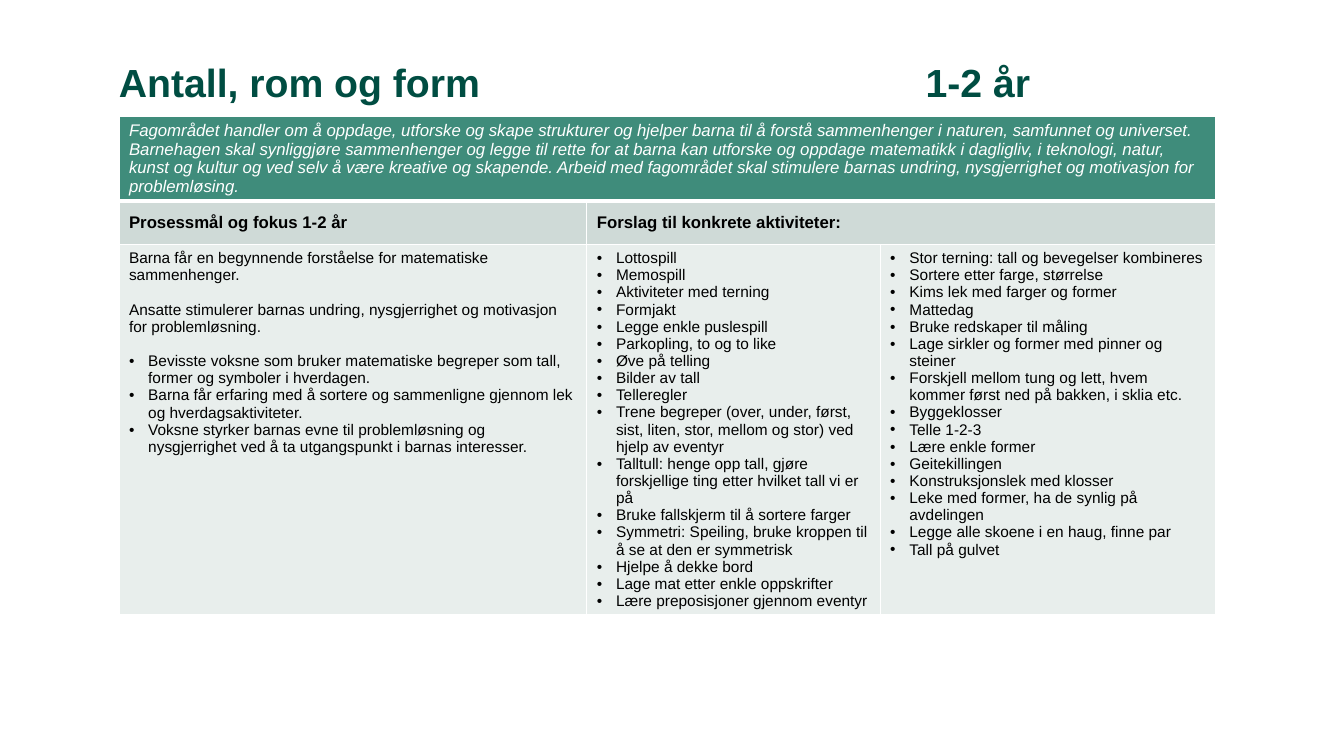
from lxml.etree import SubElement
from pptx import Presentation
from pptx.dml.color import RGBColor
from pptx.enum.text import MSO_ANCHOR, MSO_AUTO_SIZE, PP_ALIGN
from pptx.oxml import parse_xml
from pptx.oxml.ns import nsdecls, qn
from pptx.util import Inches, Pt

WHITE = RGBColor(0xFF, 0xFF, 0xFF)
BLACK = RGBColor(0x00, 0x00, 0x00)
DARK_GREEN = RGBColor(0x00, 0x4D, 0x42)
GREEN = RGBColor(0x3F, 0x8C, 0x7B)
HEADING_FILL = RGBColor(0xCF, 0xDA, 0xD7)
BODY_FILL = RGBColor(0xE8, 0xEE, 0xEC)

INTRODUCTION = (
    "Fagområdet handler om å oppdage, utforske og skape strukturer og hjelper barna til å "
    "forstå sammenhenger i naturen, samfunnet og universet. Barnehagen skal synliggjøre "
    "sammenhenger og legge til rette for at barna kan utforske og oppdage matematikk i "
    "dagligliv, i teknologi, natur, kunst og kultur og ved selv å være kreative og skapende. "
    "Arbeid med fagområdet skal stimulere barnas undring, nysgjerrighet og motivasjon for "
    "problemløsing."
)
AIMS = [
    "Barna får en begynnende forståelse for matematiske sammenhenger.",
    "Ansatte stimulerer barnas undring, nysgjerrighet og motivasjon for problemløsning.",
]
FOCUS_POINTS = [
    "Bevisste voksne som bruker matematiske begreper som tall, former og symboler i hverdagen.",
    "Barna får erfaring med å sortere og sammenligne gjennom lek og hverdagsaktiviteter.",
    "Voksne styrker barnas evne til problemløsning og nysgjerrighet ved å ta utgangspunkt i "
    "barnas interesser.",
]
ACTIVITIES_LEFT = [
    "Lottospill",
    "Memospill",
    "Aktiviteter med terning",
    "Formjakt",
    "Legge enkle puslespill",
    "Parkopling, to og to like",
    "Øve på telling",
    "Bilder av tall",
    "Telleregler",
    "Trene begreper (over, under, først, sist, liten, stor, mellom og stor) ved hjelp av eventyr",
    "Talltull: henge opp tall, gjøre forskjellige ting etter hvilket tall vi er på",
    "Bruke fallskjerm til å sortere farger",
    "Symmetri: Speiling, bruke kroppen til å se at den er symmetrisk",
    "Hjelpe å dekke bord",
    "Lage mat etter enkle oppskrifter",
    "Lære preposisjoner gjennom eventyr",
]
ACTIVITIES_RIGHT = [
    "Stor terning: tall og bevegelser kombineres",
    "Sortere etter farge, størrelse",
    "Kims lek med farger og former",
    "Mattedag",
    "Bruke redskaper til måling",
    "Lage sirkler og former med pinner og steiner",
    "Forskjell mellom tung og lett, hvem kommer først ned på bakken, i sklia etc.",
    "Byggeklosser",
    "Telle 1-2-3",
    "Lære enkle former",
    "Geitekillingen",
    "Konstruksjonslek med klosser",
    "Leke med former, ha de synlig på avdelingen",
    "Legge alle skoene i en haug, finne par",
    "Tall på gulvet",
]


class SlideBuilder:
    font_name = "Arial"
    bullet_indent = Inches(0.19)

    def __init__(self, deck):
        self.slide = deck.slides.add_slide(deck.slide_layouts[5])

    def add_run(self, para, text, size, color, bold=False, italic=False):
        span = para.add_run()
        span.text = text
        font = span.font
        font.name, font.size = self.font_name, Pt(size)
        font.bold, font.italic = bold, italic
        font.color.rgb = color

    def add_title(self, subject, age, age_offset):
        """Write the subject at the left and the age group at a tab stop."""
        box = self.slide.shapes.title
        box.left, box.top = Inches(1.18), Inches(0.54)
        box.width, box.height = Inches(11.5), Inches(0.61)
        frame = box.text_frame
        frame.margin_left = frame.margin_right = frame.margin_top = frame.margin_bottom = 0
        frame.vertical_anchor = MSO_ANCHOR.MIDDLE
        frame.auto_size = MSO_AUTO_SIZE.NONE
        frame.word_wrap = True
        para = frame.paragraphs[0]
        para.alignment = PP_ALIGN.LEFT
        para.line_spacing = 0.9
        tabs = SubElement(para._p.get_or_add_pPr(), qn("a:tabLst"))
        SubElement(tabs, qn("a:tab"), pos=str(Inches(age_offset)), algn="l")
        self.add_run(para, f"{subject}\t{age}", 28, DARK_GREEN, bold=True)

    def add_table(self, left, top, widths, heights):
        frame = self.slide.shapes.add_table(
            len(heights), len(widths), Inches(left), Inches(top),
            Inches(sum(widths)), Inches(sum(heights)))
        table = frame.table
        table.first_row = table.horz_banding = False
        for column, width in zip(table.columns, widths):
            column.width = Inches(width)
        for row, height in zip(table.rows, heights):
            row.height = Inches(height)
        return table

    def style_cell(self, cell, fill, top_border=1, bottom_border=1):
        cell.fill.solid()
        cell.fill.fore_color.rgb = fill
        borders = {"lnL": 1, "lnR": 1, "lnT": top_border, "lnB": bottom_border}
        for position, (tag, width) in enumerate(borders.items()):
            cell._tc.tcPr.insert(position, parse_xml(
                f'<a:{tag} {nsdecls("a")} w="{Pt(width)}"><a:solidFill>'
                f'<a:srgbClr val="{WHITE}"/></a:solidFill></a:{tag}>'))

    def add_paragraph(self, cell, text, size, color=BLACK, bullet=False, gap=0, **style):
        frame = cell.text_frame
        para = frame.paragraphs[0]
        if para.runs:
            para = frame.add_paragraph()
        if bullet:
            properties = para._p.get_or_add_pPr()
            properties.set("marL", str(self.bullet_indent))
            properties.set("indent", str(-self.bullet_indent))
            SubElement(properties, qn("a:buFont"), typeface=self.font_name)
            SubElement(properties, qn("a:buChar"), char="•")
        if gap:
            para.space_before = Pt(gap)
        self.add_run(para, text, size, color, **style)

    def add_bullets(self, cell, items, first_gap=0):
        for index, item in enumerate(items):
            self.add_paragraph(cell, item, 11, bullet=True, gap=0 if index else first_gap)


def main():
    deck = Presentation()
    deck.slide_width, deck.slide_height = Inches(13.33), Inches(7.5)
    builder = SlideBuilder(deck)
    builder.add_title("Antall, rom og form", "1-2 år", 8)

    table = builder.add_table(1.18, 1.15, [4.64, 2.91, 3.33], [0.75, 0.43, 3.05])
    row_styles = [(GREEN, 1, 3), (HEADING_FILL, 3, 1), (BODY_FILL, 1, 1)]
    for row, row_style in zip(table.rows, row_styles):
        for cell in row.cells:
            builder.style_cell(cell, *row_style)
    table.cell(0, 0).merge(table.cell(0, 2))
    table.cell(1, 1).merge(table.cell(1, 2))

    builder.add_paragraph(table.cell(0, 0), INTRODUCTION, 12, WHITE, italic=True)
    headings = ["Prosessmål og fokus 1-2 år", "Forslag til konkrete aktiviteter:"]
    for column, heading in enumerate(headings):
        cell = table.cell(1, column)
        cell.vertical_anchor = MSO_ANCHOR.MIDDLE
        builder.add_paragraph(cell, heading, 12, bold=True)

    line_gap = 12.3
    for index, aim in enumerate(AIMS):
        builder.add_paragraph(table.cell(2, 0), aim, 11, gap=line_gap if index else 0)
    builder.add_bullets(table.cell(2, 0), FOCUS_POINTS, first_gap=line_gap)
    builder.add_bullets(table.cell(2, 1), ACTIVITIES_LEFT)
    builder.add_bullets(table.cell(2, 2), ACTIVITIES_RIGHT)

    deck.save("out.pptx")


if __name__ == "__main__":
    main()
